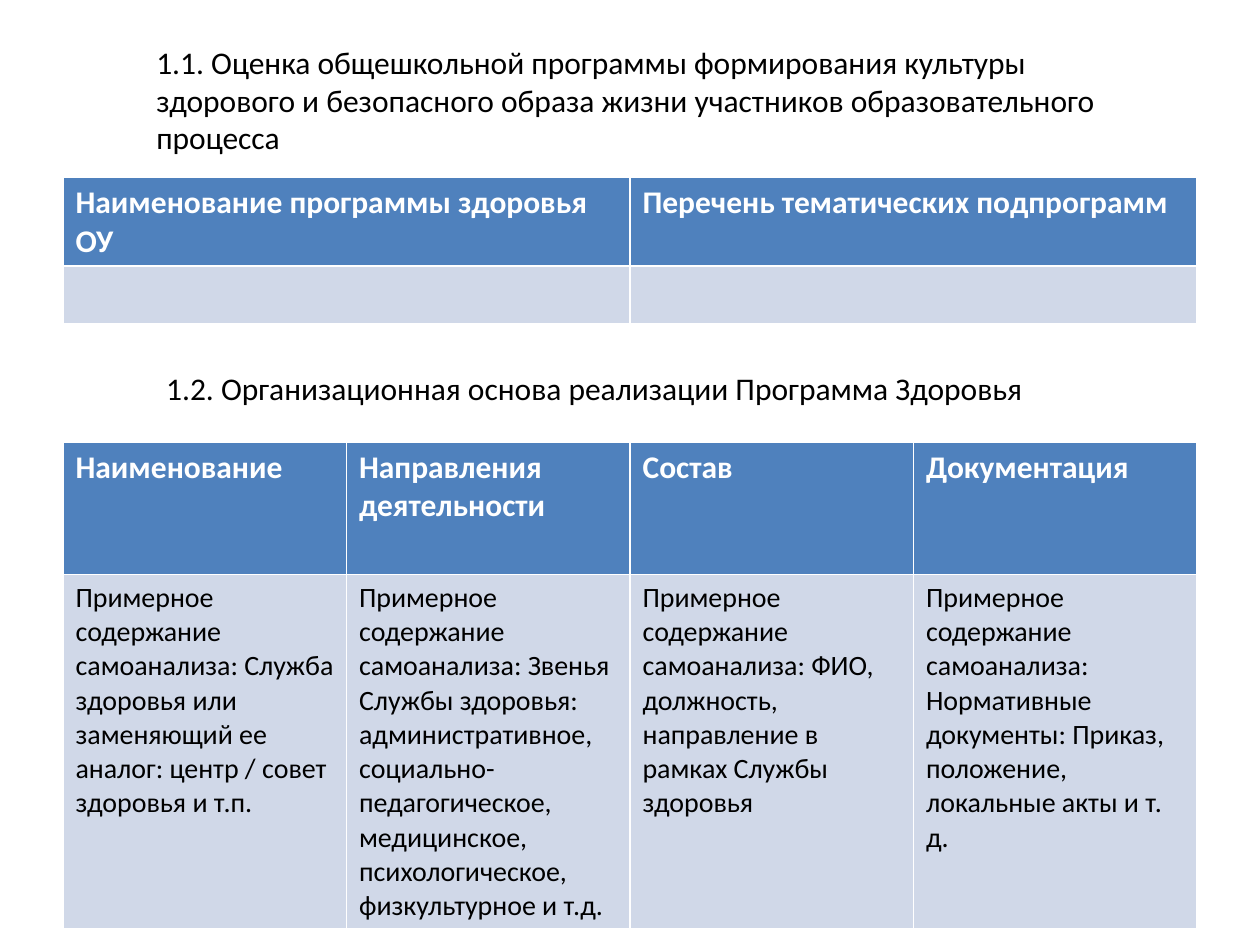
from pptx import Presentation
from pptx.dml.color import RGBColor as RGB
from pptx.enum.text import MSO_ANCHOR, MSO_AUTO_SIZE, PP_ALIGN
from pptx.util import Inches, Pt

COLORS = {"header": "4F81BD", "body": "D0D8E8", "light": "FFFFFF", "dark": "000000"}
FONT = "Calibri"
MARGIN = 0.5
TABLE_WIDTH = 9

SAMPLE = "Примерное содержание самоанализа: "
PROGRAM_ROWS = [
    ["Наименование программы здоровья ОУ", "Перечень тематических подпрограмм"],
    ["", ""],
]
ORGANIZATION_ROWS = [
    ["Наименование", "Направления деятельности", "Состав", "Документация"],
    [SAMPLE + text for text in (
        "Служба здоровья или заменяющий ее аналог: центр / совет здоровья и т.п.",
        "Звенья Службы здоровья: административное, социально-педагогическое, "
        "медицинское, психологическое, физкультурное и т.д.",
        "ФИО, должность, направление в рамках Службы здоровья",
        "Нормативные документы: Приказ, положение, локальные акты и т. д.",
    )],
]


def style_paragraph(p, size, color, bold=False):
    p.font.name = FONT
    p.font.size = Pt(size)
    p.font.bold = bold
    p.font.color.rgb = RGB.from_string(COLORS[color])


def set_heading(sp, text, left, top, width, height):
    sp.left, sp.top = Inches(left), Inches(top)
    sp.width, sp.height = Inches(width), Inches(height)
    tf = sp.text_frame
    tf.word_wrap = True
    tf.auto_size = MSO_AUTO_SIZE.SHAPE_TO_FIT_TEXT
    tf.vertical_anchor = MSO_ANCHOR.TOP
    tf.text = text
    p = tf.paragraphs[0]
    p.alignment = PP_ALIGN.LEFT
    style_paragraph(p, 18, "dark")


def add_grid(s, rows, top, heights, body_size):
    columns = len(rows[0])
    table = s.shapes.add_table(
        len(rows), columns, Inches(MARGIN), Inches(top),
        Inches(TABLE_WIDTH), Inches(sum(heights))).table
    for column in table.columns:
        column.width = Inches(TABLE_WIDTH / columns)
    for i, (texts, height) in enumerate(zip(rows, heights)):
        table.rows[i].height = Inches(height)
        header = i == 0
        for j, text in enumerate(texts):
            cell = table.cell(i, j)
            cell.fill.solid()
            cell.fill.fore_color.rgb = RGB.from_string(COLORS["header" if header else "body"])
            cell.text = text
            style_paragraph(cell.text_frame.paragraphs[0],
                            18 if header else body_size,
                            "light" if header else "dark", header)


def main():
    prs = Presentation()
    prs.slide_width, prs.slide_height = Inches(10), Inches(7.5)
    s = prs.slides.add_slide(prs.slide_layouts[5])

    set_heading(s.shapes.title,
                "1.1. Оценка общешкольной программы формирования культуры здорового "
                "и безопасного образа жизни участников образовательного процесса",
                1.14, 0.29, 7.87, 1.01)
    add_grid(s, PROGRAM_ROWS, 1.41, [0.7, 0.46], 18)

    set_heading(s.shapes.add_textbox(0, 0, 0, 0),
                "1.2. Организационная основа реализации Программа Здоровья",
                1.22, 2.88, 7.95, 0.4)
    add_grid(s, ORGANIZATION_ROWS, 3.51, [1.05, 2.81], 16)

    prs.save("out.pptx")


if __name__ == "__main__":
    main()
